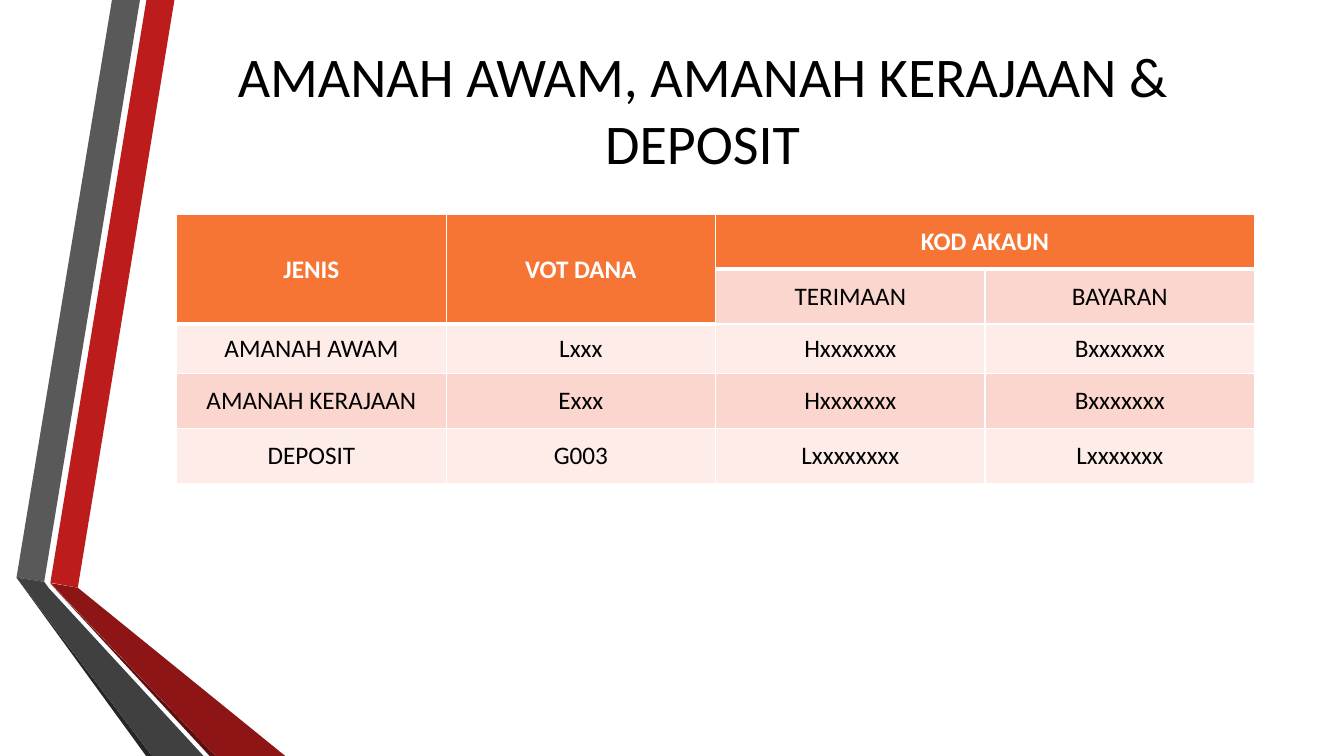
from lxml import etree
from pptx import Presentation
from pptx.dml.color import RGBColor
from pptx.enum.text import MSO_ANCHOR, PP_ALIGN
from pptx.oxml.ns import qn
from pptx.util import Pt

FONT = "Calibri"
TITLE = "AMANAH AWAM, AMANAH KERAJAAN & DEPOSIT"
RIBBONS = [
    ("BC1C1C", [(36, 416.2), (55.6, 419.8), (124.6, 0), (104.6, 0)]),
    ("595959", [(100, 0), (80, 0), (11.8, 412.6), (31.6, 415.6)]),
    ("262626", [(11.8, 412.6), (104.4, 540), (108.7, 540)]),
    ("5E0E0E", [(36, 416.9), (149.8, 540), (154.1, 540)]),
    ("8D1515", [(36, 416.5), (154.1, 540), (203.8, 540), (55.6, 419.8)]),
    ("404040", [(145.4, 540), (34.6, 419.8), (31.6, 415.6), (11.8, 412.6), (108.7, 540)]),
]
ROWS = [
    ("JENIS", "VOT DANA", "KOD AKAUN", ""),
    ("", "", "TERIMAAN", "BAYARAN"),
    ("AMANAH AWAM", "Lxxx", "Hxxxxxxx", "Bxxxxxxx"),
    ("AMANAH KERAJAAN", "Exxx", "Hxxxxxxx", "Bxxxxxxx"),
    ("DEPOSIT", "G003", "Lxxxxxxxx", "Lxxxxxxx"),
]
ROW_HEIGHTS = [38.6, 39.4, 35.2, 39.4, 39.6]
COL_WIDTH = 192.5
MERGES = [((0, 0), (1, 0)), ((0, 1), (1, 1)), ((0, 2), (0, 3))]
HEADER, BANDS = "F67534", ("FDECE8", "FBD6CE")


def rgb(value):
    return RGBColor.from_string(value)


def is_header(row, col):
    return row == 0 or (row == 1 and col < 2)


def write(tf, text, size, color, bold=False):
    tf.word_wrap = True
    tf.vertical_anchor = MSO_ANCHOR.MIDDLE
    p = tf.paragraphs[0]
    p.text = text
    p.alignment = PP_ALIGN.CENTER
    p.font.name, p.font.size, p.font.bold = FONT, Pt(size), bold
    p.font.color.rgb = rgb(color)


def add_borders(cell, widths):
    tcPr = cell._tc.get_or_add_tcPr()
    for i, (side, width) in enumerate(widths.items()):
        ln = etree.Element(qn("a:ln" + side), w=str(Pt(width)))
        fill = etree.SubElement(ln, qn("a:solidFill"))
        etree.SubElement(fill, qn("a:srgbClr"), val="FFFFFF")
        tcPr.insert(i, ln)


def add_ribbon(s, color, points):
    corners = [(Pt(x), Pt(y)) for x, y in points]
    builder = s.shapes.build_freeform(*corners[0], scale=1.0)
    builder.add_line_segments(corners[1:], close=True)
    sp = builder.convert_to_shape()
    sp.shadow.inherit = False
    sp.fill.solid()
    sp.fill.fore_color.rgb = rgb(color)
    sp.line.fill.background()


def add_code_table(s):
    n_cols = len(ROWS[0])
    table = s.shapes.add_table(len(ROWS), n_cols, Pt(126.2), Pt(153.5),
                               Pt(COL_WIDTH * n_cols), Pt(sum(ROW_HEIGHTS))).table
    for column in table.columns:
        column.width = Pt(COL_WIDTH)
    for row, height in zip(table.rows, ROW_HEIGHTS):
        row.height = Pt(height)
    for first, last in MERGES:
        table.cell(*first).merge(table.cell(*last))
    for r, texts in enumerate(ROWS):
        for c, text in enumerate(texts):
            cell, header = table.cell(r, c), is_header(r, c)
            cell.fill.solid()
            cell.fill.fore_color.rgb = rgb(HEADER if header else BANDS[r % 2])
            below_header = not header and is_header(r - 1, c)
            add_borders(cell, {"L": 1, "R": 1, "T": 3 if below_header else 1,
                               "B": 3 if header else 1})
            cell.vertical_anchor = MSO_ANCHOR.MIDDLE
            if text:
                write(cell.text_frame, text, 18, "FFFFFF" if header else "000000", header)


prs = Presentation()
prs.slide_width, prs.slide_height = Pt(960), Pt(540)
s = prs.slides.add_slide(prs.slide_layouts[6])
for color, points in RIBBONS:
    add_ribbon(s, color, points)
title = s.shapes.add_textbox(Pt(107.3), Pt(8.6), Pt(789.1), Pt(138.2))
write(title.text_frame, TITLE, 40, "000000")
add_code_table(s)
prs.save("out.pptx")
